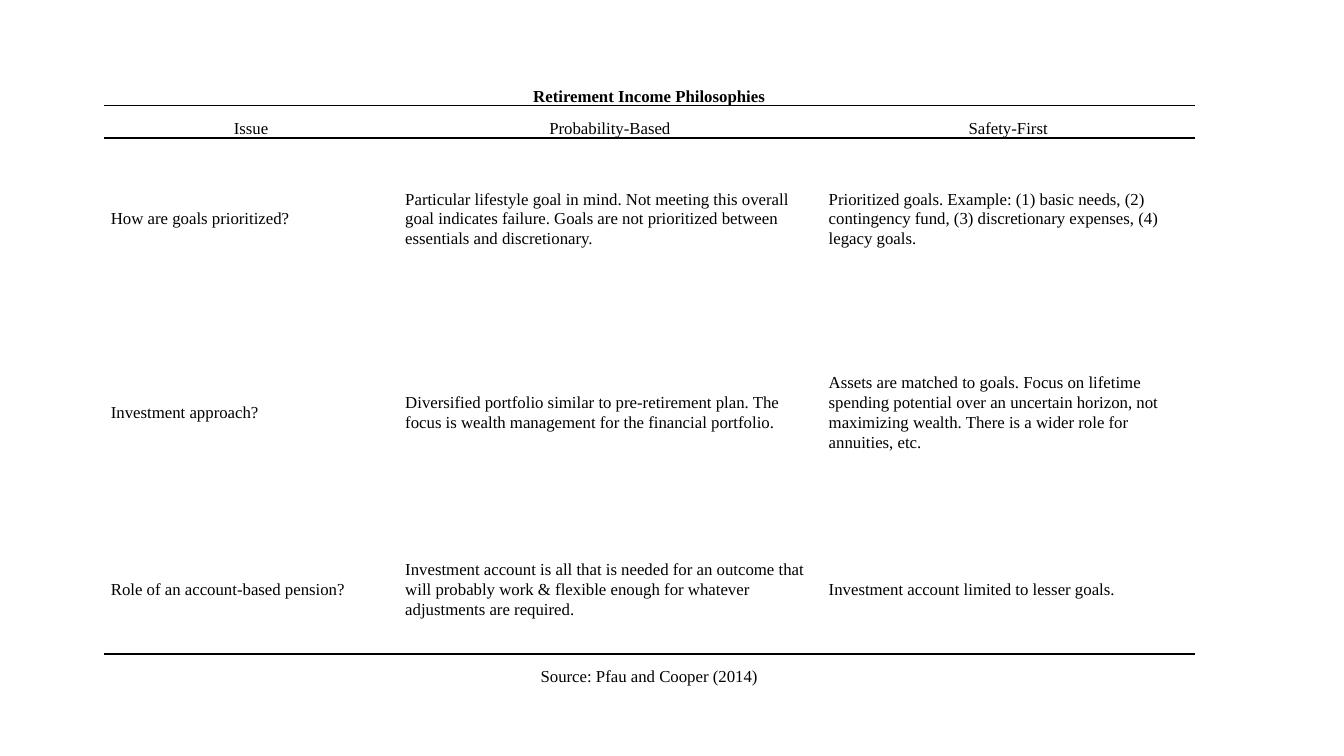
from lxml import etree
from pptx import Presentation
from pptx.dml.color import RGBColor
from pptx.enum.text import MSO_ANCHOR, PP_ALIGN
from pptx.oxml.ns import qn
from pptx.util import Inches, Pt

CENTER, LEFT = PP_ALIGN.CENTER, PP_ALIGN.LEFT
BOTTOM, MIDDLE = MSO_ANCHOR.BOTTOM, MSO_ANCHOR.MIDDLE

FONT = "Times New Roman"
BLACK = "000000"
COLUMN_WIDTHS = [2.92, 4.2, 3.7]
ROW_HEIGHTS = [0.32, 0.32, 1.6, 2.24, 1.28, 0.32]
RULED_EDGES = {1, 2, 5}  # row edges, counted from the top, that carry a line

TITLE = "Retirement Income Philosophies"
HEADINGS = ["Issue", "Probability-Based", "Safety-First"]
ISSUES = [
    ["How are goals prioritized?",
     "Particular lifestyle goal in mind. Not meeting this overall goal indicates failure. "
     "Goals are not prioritized between essentials and discretionary.",
     "Prioritized goals. Example: (1) basic needs, (2) contingency fund, "
     "(3) discretionary expenses, (4) legacy goals."],
    ["Investment approach?",
     "Diversified portfolio similar to pre-retirement plan. "
     "The focus is wealth management for the financial portfolio.",
     "Assets are matched to goals. Focus on lifetime spending potential over an uncertain "
     "horizon, not maximizing wealth. There is a wider role for annuities, etc."],
    ["Role of an account-based pension?",
     "Investment account is all that is needed for an outcome that will probably work "
     "& flexible enough for whatever adjustments are required.",
     "Investment account limited to lesser goals."],
]
SOURCE = "Source: Pfau and Cooper (2014)"


def color(hex_value):
    return RGBColor.from_string(hex_value)


def write_text(cell, text, align=LEFT, anchor=MIDDLE, bold=False):
    cell.vertical_anchor = anchor
    paragraph = cell.text_frame.paragraphs[0]
    paragraph.alignment = align
    paragraph.line_spacing = 1.07
    run = paragraph.add_run()
    run.text = text
    run.font.name = FONT
    run.font.size = Pt(12)
    run.font.bold = bold
    run.font.color.rgb = color(BLACK)


def set_borders(cell, ruled_sides):
    properties = cell._tc.get_or_add_tcPr()
    for side in "LRTB":
        line = etree.SubElement(properties, qn(f"a:ln{side}"), w=str(Pt(1)))
        if side in ruled_sides:
            fill = etree.SubElement(line, qn("a:solidFill"))
            etree.SubElement(fill, qn("a:srgbClr"), val=BLACK)
        else:
            etree.SubElement(line, qn("a:noFill"))


def style_cell(cell, row):
    cell.margin_left = cell.margin_right = Inches(0.07)
    cell.margin_top = cell.margin_bottom = 0
    edges = {"T": row, "B": row + 1}
    set_borders(cell, [side for side, edge in edges.items() if edge in RULED_EDGES])
    cell.fill.background()


def add_philosophies_table(slide, left, top):
    table = slide.shapes.add_table(
        len(ROW_HEIGHTS), len(COLUMN_WIDTHS), Inches(left), Inches(top),
        Inches(sum(COLUMN_WIDTHS)), Inches(sum(ROW_HEIGHTS))).table
    table.first_row = table.horz_banding = False
    for column, width in zip(table.columns, COLUMN_WIDTHS):
        column.width = Inches(width)
    for index, (row, height) in enumerate(zip(table.rows, ROW_HEIGHTS)):
        row.height = Inches(height)
        for cell in row.cells:
            style_cell(cell, index)

    # Title and source span the full width
    last_row, last_column = len(ROW_HEIGHTS) - 1, len(COLUMN_WIDTHS) - 1
    for row, text, bold in [(0, TITLE, True), (last_row, SOURCE, False)]:
        table.cell(row, 0).merge(table.cell(row, last_column))
        write_text(table.cell(row, 0), text, align=CENTER, anchor=BOTTOM, bold=bold)

    # Column headings
    for column, heading in enumerate(HEADINGS):
        write_text(table.cell(1, column), heading, align=CENTER, anchor=BOTTOM)

    # Comparison by issue
    for row, texts in enumerate(ISSUES, start=2):
        for column, text in enumerate(texts):
            write_text(table.cell(row, column), text)


def main():
    presentation = Presentation()
    presentation.slide_width = Inches(13.33)
    presentation.slide_height = Inches(7.5)
    slide = presentation.slides.add_slide(presentation.slide_layouts[6])
    add_philosophies_table(slide, left=1.03, top=0.73)
    presentation.save("out.pptx")


if __name__ == "__main__":
    main()
